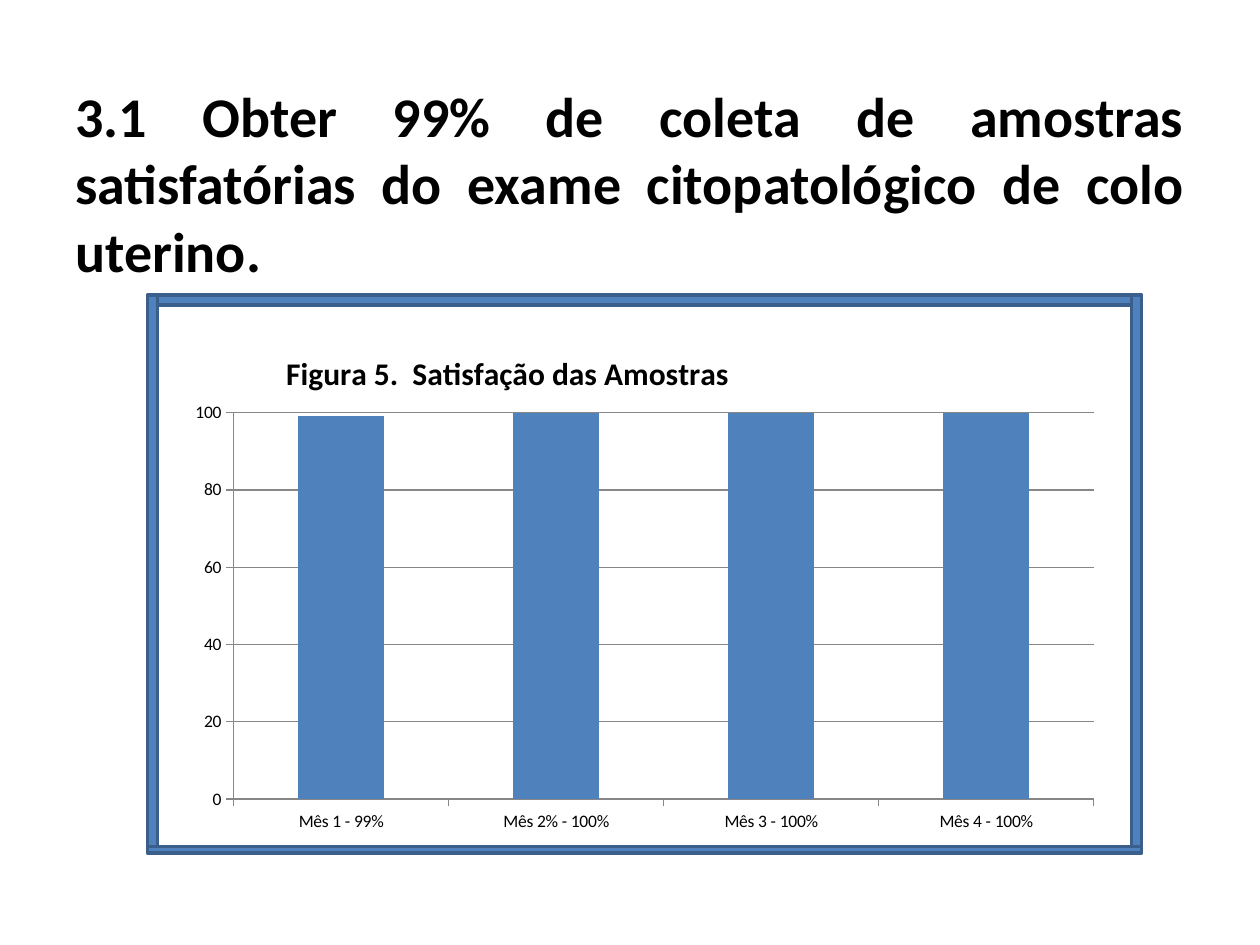
from lxml import etree
from pptx import Presentation
from pptx.chart.data import CategoryChartData
from pptx.dml.color import RGBColor
from pptx.enum.chart import XL_CHART_TYPE, XL_TICK_MARK
from pptx.enum.shapes import MSO_SHAPE
from pptx.enum.text import PP_ALIGN
from pptx.oxml.ns import qn
from pptx.util import Inches, Pt

BLACK = RGBColor(0x00, 0x00, 0x00)
BLUE = RGBColor(0x4F, 0x81, 0xBD)
DARK_BLUE = RGBColor(0x3A, 0x5F, 0x8C)
GRAY = RGBColor(0x87, 0x87, 0x87)

OBJECTIVE = ("3.1 Obter 99% de coleta de amostras satisfatórias do exame "
             "citopatológico de colo uterino.")
CHART_TITLE = "Figura 5.  Satisfação das Amostras"
RESULTS = {"Mês 1 - 99%": 99, "Mês 2% - 100%": 100,
           "Mês 3 - 100%": 100, "Mês 4 - 100%": 100}
TITLE_LAYOUT = {"xMode": "edge", "yMode": "edge", "x": 0.11, "y": 0.04}
PLOT_LAYOUT = {"layoutTarget": "inner", "xMode": "edge", "yMode": "edge",
               "x": 0.06, "y": 0.17, "w": 0.92, "h": 0.75}
FRAME_BARS = [(1.25, 2.34, 7.73, 0.08), (8.98, 2.34, 0.08, 4.38),
              (1.17, 2.34, 0.08, 4.38), (1.17, 6.72, 7.89, 0.05)]


def style_font(font, size, bold=False):
    """Apply the slide's typeface and colour to a font."""
    values = {"name": "Calibri", "size": Pt(size), "bold": bold}
    for name, value in values.items():
        setattr(font, name, value)
    font.color.rgb = BLACK


def add_objective(page, text, place):
    """Add the justified bold statement."""
    box = page.shapes.add_textbox(*map(Inches, place))
    box.text_frame.word_wrap = True
    para = box.text_frame.paragraphs[0]
    para.alignment = PP_ALIGN.JUSTIFY
    span = para.add_run()
    span.text = text
    style_font(span.font, 32, bold=True)


def set_layout(element, following, values):
    """Place a chart part by hand, ahead of the first following tag."""
    for old in element.findall(qn("c:layout")):
        element.remove(old)
    layout = etree.Element(qn("c:layout"))
    manual = etree.SubElement(layout, qn("c:manualLayout"))
    for name, value in values.items():
        etree.SubElement(manual, qn(f"c:{name}")).set("val", str(value))
    element.find(qn(following)).addprevious(layout)


def style_axis(axis):
    """Give an axis a gray line and crossing ticks."""
    axis.major_tick_mark = XL_TICK_MARK.OUTSIDE
    axis.format.line.color.rgb = GRAY
    axis.format.line.width = Pt(0.75)
    style_font(axis.tick_labels.font, 10)


def add_results_chart(page, results, place):
    """Add the column chart of monthly results."""
    data = CategoryChartData()
    data.categories = list(results)
    data.add_series("Series 1", list(results.values()))
    chart = page.shapes.add_chart(
        XL_CHART_TYPE.COLUMN_CLUSTERED, *map(Inches, place), data).chart
    style_font(chart.font, 10)
    chart.has_legend = False

    title = chart.chart_title
    title.text_frame.text = CHART_TITLE
    style_font(title.text_frame.paragraphs[0].runs[0].font, 18, bold=True)
    title_element = chart.element.find(f".//{qn('c:title')}")
    set_layout(title_element, "c:overlay", TITLE_LAYOUT)
    plot_area = chart.element.find(f".//{qn('c:plotArea')}")
    set_layout(plot_area, "c:barChart", PLOT_LAYOUT)

    plot = chart.plots[0]
    plot.vary_by_categories = False
    plot.gap_width = 150
    columns = plot.series[0]
    columns.format.fill.solid()
    columns.format.fill.fore_color.rgb = BLUE

    value_axis = chart.value_axis
    scale = {"minimum_scale": 0, "maximum_scale": 100, "major_unit": 20,
             "has_major_gridlines": True}
    for name, value in scale.items():
        setattr(value_axis, name, value)
    value_axis.major_gridlines.format.line.color.rgb = GRAY
    for axis in (chart.category_axis, value_axis):
        style_axis(axis)


def add_frame_bar(page, place):
    """Add one side of the frame around the chart."""
    bar = page.shapes.add_shape(MSO_SHAPE.RECTANGLE, *map(Inches, place))
    bar.shadow.inherit = False
    bar.fill.solid()
    bar.fill.fore_color.rgb = BLUE
    bar.line.color.rgb = DARK_BLUE
    bar.line.width = Pt(2)


def main():
    """Build and save the slide."""
    deck = Presentation()
    deck.slide_width, deck.slide_height = Inches(10), Inches(7.5)
    page = deck.slides.add_slide(deck.slide_layouts[6])
    add_objective(page, OBJECTIVE, (0.5, 0.6, 9, 6.1))
    add_results_chart(page, RESULTS, (1.41, 2.58, 7.42, 4.09))
    for place in FRAME_BARS:
        add_frame_bar(page, place)
    deck.save("out.pptx")


main()
